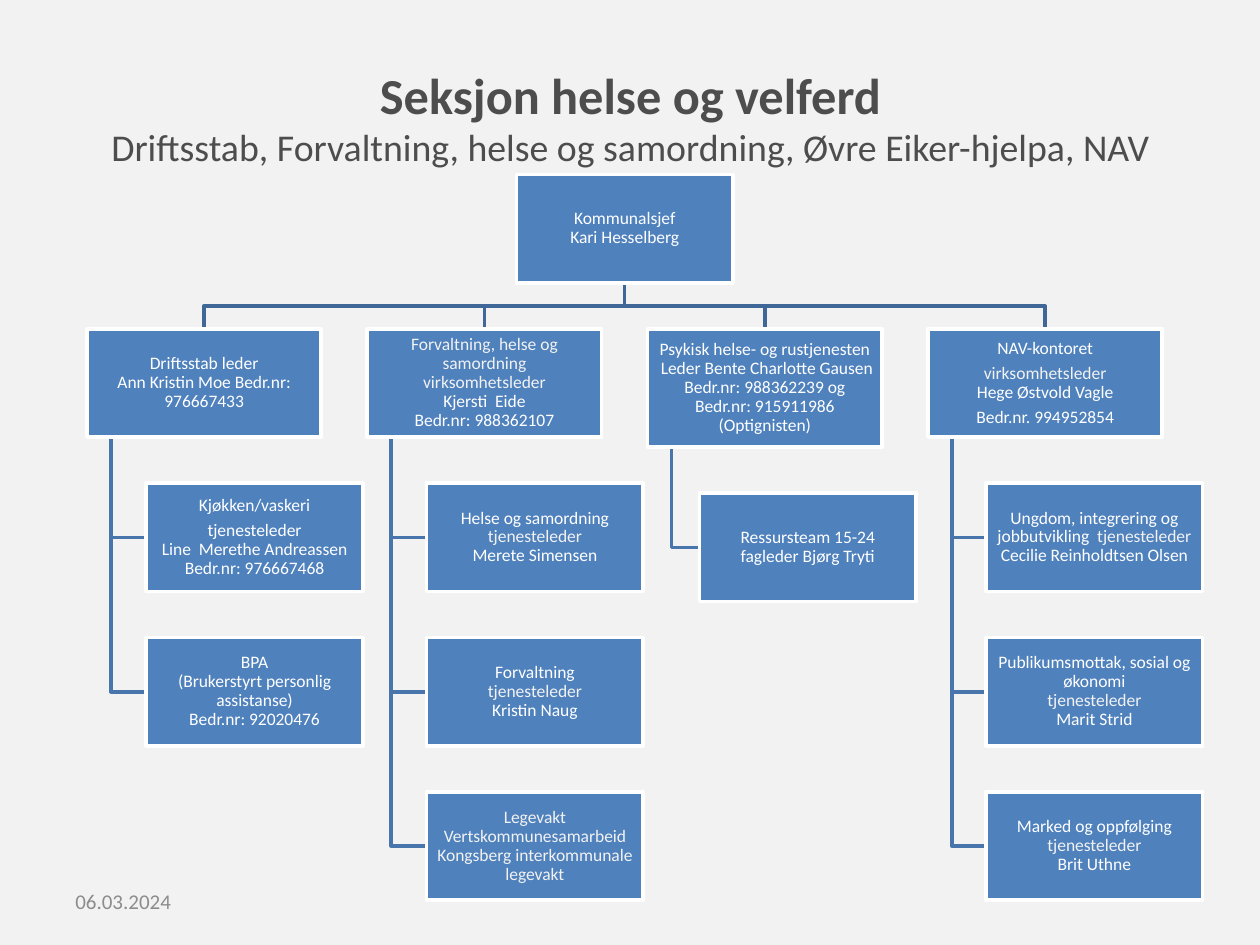
"""Organisation chart for the health and welfare section."""
import pptx
import pptx.dml.color
import pptx.enum.text
import pptx.util

BACKGROUND = pptx.dml.color.RGBColor(0xF2, 0xF2, 0xF2)
WHITE = pptx.dml.color.RGBColor(0xFF, 0xFF, 0xFF)
BOX_BLUE = pptx.dml.color.RGBColor(0x4F, 0x81, 0xBD)
TRUNK_BLUE = pptx.dml.color.RGBColor(0x3F, 0x67, 0x97)
BRANCH_BLUE = pptx.dml.color.RGBColor(0x48, 0x75, 0xAC)
TITLE_GREY = pptx.dml.color.RGBColor(0x4D, 0x4D, 0x4D)
DATE_GREY = pptx.dml.color.RGBColor(0x8C, 0x8C, 0x8C)

LEFT, TOP = 0.69, 2.61
COLUMN, ROW = 2.225, 1.225
UNIT_WIDTH, LEADER_WIDTH, BOX_HEIGHT = 1.72, 1.86, 0.86
CHIEF_CENTRE = LEFT + 1.5 * COLUMN + LEADER_WIDTH / 2
CHIEF_TOP = TOP - ROW
TRUNK_INDENT = 0.19

CHIEF = ["Kommunalsjef\vKari Hesselberg"]
DEPARTMENTS = [
    (["Driftsstab leder\vAnn Kristin Moe Bedr.nr: 976667433"], BOX_HEIGHT, 0.47, [
        ["Kjøkken/vaskeri", "tjenesteleder\vLine  Merethe Andreassen\vBedr.nr: 976667468"],
        ["BPA\v(Brukerstyrt personlig assistanse)\vBedr.nr: 92020476"],
    ]),
    (["|Forvaltning, helse og samordning\vvirksomhetsleder\v|Kjersti  Eide\vBedr.nr: 988362107"],
     BOX_HEIGHT, 0.47, [
        ["Helse og samordning |tjenesteleder\v|Merete Simensen"],
        ["Forvaltning\v|tjenesteleder\v|Kristin Naug"],
        ["|Legevakt\vVertskommunesamarbeid Kongsberg interkommunale legevakt"],
    ]),
    (["Psykisk helse- og rustjenesten\v Leder Bente Charlotte Gausen\v"
      "Bedr.nr: 988362239 og\vBedr.nr: 915911986 (Optignisten)"], 0.94, 0.41, [
        ["Ressursteam 15-24\vfagleder Bjørg Tryti"],
    ]),
    (["NAV-kontoret", "|virksomhetsleder\v|Hege Østvold Vagle", "Bedr.nr. 994952854"],
     BOX_HEIGHT, 0.46, [
        ["Ungdom, integrering og jobbutvikling  |tjenesteleder| Cecilie Reinholdtsen Olsen"],
        ["Publikumsmottak, sosial og økonomi\v|tjenesteleder\v|Marit Strid"],
        ["Marked og oppfølging\v|tjenesteleder\v|Brit Uthne"],
    ]),
]

deck = pptx.Presentation()
deck.slide_width, deck.slide_height = pptx.util.Inches(10), pptx.util.Inches(7.5)
slide = deck.slides.add_slide(deck.slide_layouts[6])
slide.background.fill.solid()
slide.background.fill.fore_color.rgb = BACKGROUND


def add_branch(points, colour):
    corners = [(pptx.util.Inches(x), pptx.util.Inches(y)) for x, y in points]
    builder = slide.shapes.build_freeform(*corners[0])
    builder.add_line_segments(corners[1:], close=False)
    branch = builder.convert_to_shape()
    branch.shadow.inherit = False
    branch.fill.background()
    branch.line.color.rgb = colour
    branch.line.width = pptx.util.Pt(2)


def add_box(left, top, width, height, wording):
    box = slide.shapes.add_shape(1, *map(pptx.util.Inches, (left, top, width, height)))
    box.shadow.inherit = False
    box.fill.solid()
    box.fill.fore_color.rgb = BOX_BLUE
    box.line.color.rgb = WHITE
    box.line.width = pptx.util.Pt(2)
    frame = box.text_frame
    frame.word_wrap = True
    frame.vertical_anchor = pptx.enum.text.MSO_ANCHOR.MIDDLE
    frame.margin_left = frame.margin_right = pptx.util.Inches(0.01)
    frame.margin_top = frame.margin_bottom = pptx.util.Inches(0.01)
    for number, marked in enumerate(wording):
        paragraph = frame.add_paragraph() if number else frame.paragraphs[0]
        paragraph.alignment = pptx.enum.text.PP_ALIGN.CENTER
        paragraph.line_spacing = 0.9
        paragraph.space_after = pptx.util.Pt(3.5)
        paragraph.font.size = pptx.util.Pt(10)
        for part_number, part in enumerate(marked.split("|")):
            for line_number, line in enumerate(part.split("\v")):
                if line_number:
                    paragraph.add_line_break()
                if line:
                    run = paragraph.add_run()
                    run.text = line
                    run.font.name = "Calibri"
                    run.font.size = pptx.util.Pt(10)
                    run.font.color.rgb = BACKGROUND if part_number % 2 else WHITE


title = slide.shapes.add_textbox(*map(pptx.util.Inches, (0.51, 0.3, 8.99, 1.25)))
title.text_frame.word_wrap = True
title.text_frame.vertical_anchor = pptx.enum.text.MSO_ANCHOR.MIDDLE
heading = title.text_frame.paragraphs[0]
heading.text = ("Seksjon helse og velferd\v"
                "Driftsstab, Forvaltning, helse og samordning, Øvre Eiker-hjelpa, NAV")
heading.alignment = pptx.enum.text.PP_ALIGN.CENTER
for run, size, bold in zip(heading.runs, (28.8, 21.6), (True, False)):
    run.font.name = "Calibri"
    run.font.size = pptx.util.Pt(size)
    run.font.bold = bold
    run.font.color.rgb = TITLE_GREY

for column, (leader, leader_height, unit_indent, units) in enumerate(DEPARTMENTS):
    leader_left = LEFT + column * COLUMN
    leader_centre = leader_left + LEADER_WIDTH / 2
    leader_bottom = TOP + leader_height
    chief_bottom = CHIEF_TOP + BOX_HEIGHT
    middle = (chief_bottom + TOP) / 2
    add_branch([(CHIEF_CENTRE, chief_bottom), (CHIEF_CENTRE, middle),
                (leader_centre, middle), (leader_centre, TOP)], TRUNK_BLUE)
    trunk = leader_left + TRUNK_INDENT
    unit_left = leader_left + unit_indent
    for row, unit in enumerate(units):
        unit_top = leader_bottom - BOX_HEIGHT + (row + 1) * ROW
        unit_middle = unit_top + BOX_HEIGHT / 2
        add_branch([(trunk, leader_bottom), (trunk, unit_middle),
                    (unit_left, unit_middle)], BRANCH_BLUE)
        add_box(unit_left, unit_top, UNIT_WIDTH, BOX_HEIGHT, unit)
    add_box(leader_left, TOP, LEADER_WIDTH, leader_height, leader)
add_box(CHIEF_CENTRE - UNIT_WIDTH / 2, CHIEF_TOP, UNIT_WIDTH, BOX_HEIGHT, CHIEF)

date = slide.shapes.add_textbox(*map(pptx.util.Inches, (0.5, 6.95, 2.33, 0.4)))
date.text_frame.word_wrap = True
date.text_frame.vertical_anchor = pptx.enum.text.MSO_ANCHOR.MIDDLE
date.text_frame.text = "06.03.2024"
date_font = date.text_frame.paragraphs[0].runs[0].font
date_font.name = "Calibri"
date_font.size = pptx.util.Pt(12)
date_font.color.rgb = DATE_GREY

deck.save("out.pptx")
